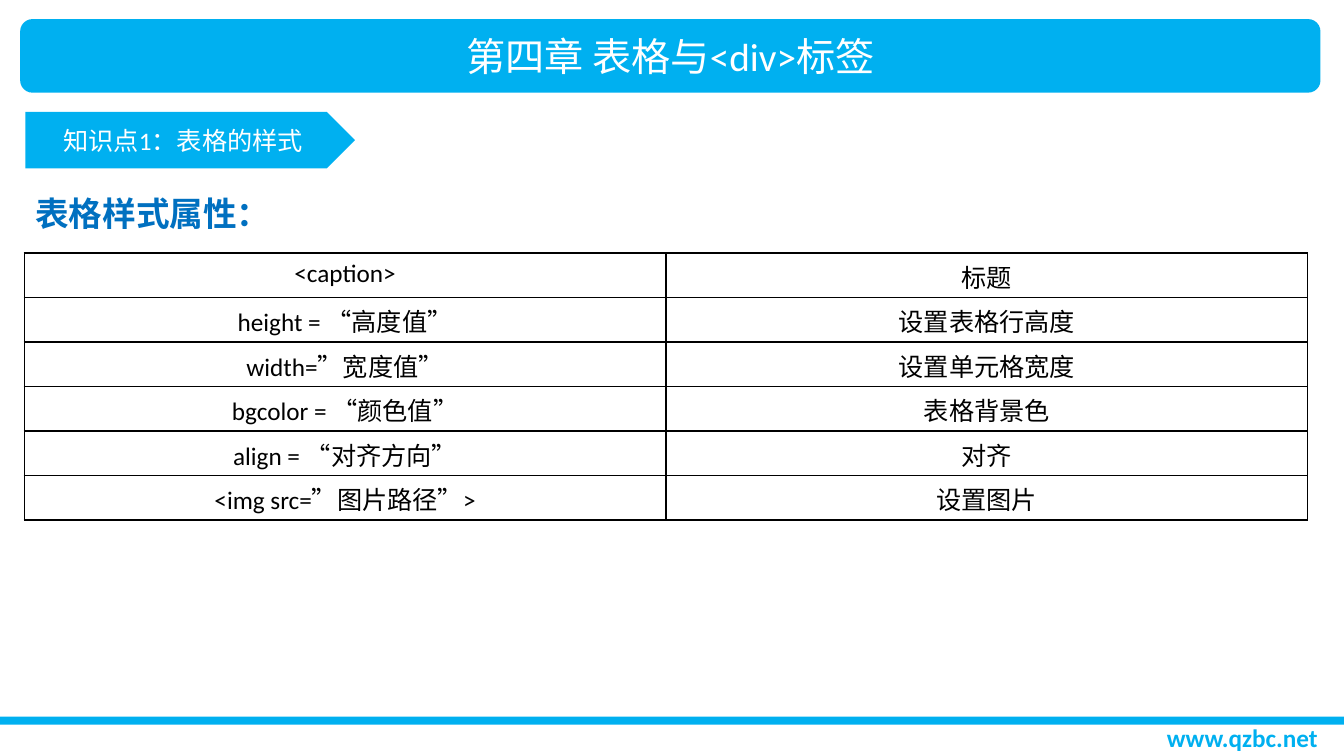
import dataclasses

import pptx
import pptx.dml.color
import pptx.enum.lang
import pptx.enum.shapes
import pptx.enum.text
import pptx.oxml
import pptx.oxml.ns
import pptx.util

SHAPE = pptx.enum.shapes.MSO_SHAPE
ALIGN = pptx.enum.text.PP_ALIGN
ANCHOR = pptx.enum.text.MSO_ANCHOR
SLIDE_WIDTH = pptx.util.Inches(13.333)
SLIDE_HEIGHT = pptx.util.Inches(7.5)
TITLE_ONLY_LAYOUT = 5


@dataclasses.dataclass(frozen=True)
class Theme:
    accent: str = "00B0F0"
    heading: str = "0070C0"
    light: str = "FFFFFF"
    dark: str = "000000"
    latin_font: str = "Calibri"
    chinese_font: str = "Noto Sans CJK SC"
    chapter_size: int = 28
    heading_size: int = 24
    body_size: int = 18
    border_width: int = 1


THEME = Theme()

ATTRIBUTES = [
    ("<caption>", "标题"),
    ("height = “高度值”", "设置表格行高度"),
    ("width=”宽度值”", "设置单元格宽度"),
    ("bgcolor = “颜色值”", "表格背景色"),
    ("align = “对齐方向”", "对齐"),
    ("<img src=”图片路径”>", "设置图片"),
]


def color(value):
    return pptx.dml.color.RGBColor.from_string(value)


def area(left, top, width, height):
    """Turn percentages of the slide's size into lengths."""
    return (
        round(SLIDE_WIDTH * left / 100),
        round(SLIDE_HEIGHT * top / 100),
        round(SLIDE_WIDTH * width / 100),
        round(SLIDE_HEIGHT * height / 100),
    )


def apply_format(target, values):
    for name, value in values.items():
        setattr(target, name, value)


def write(text_frame, text, text_color, size=THEME.body_size,
          alignment=ALIGN.CENTER, latin_font=THEME.latin_font, bold=False):
    paragraph = text_frame.paragraphs[0]
    paragraph.alignment = alignment
    run = paragraph.add_run()
    run.text = text
    run.font.color.rgb = color(text_color)
    apply_format(run.font, {
        "name": latin_font,
        "size": pptx.util.Pt(size),
        "bold": bold,
        "language_id": pptx.enum.lang.MSO_LANGUAGE_ID.SIMPLIFIED_CHINESE,
    })
    latin = run.font._element.find(pptx.oxml.ns.qn("a:latin"))
    latin.addnext(pptx.oxml.parse_xml(
        f'<a:ea {pptx.oxml.ns.nsdecls("a")} typeface="{THEME.chinese_font}"/>'))


def add_block(slide, preset, bounds):
    shape = slide.shapes.add_shape(preset, *bounds)
    shape.shadow.inherit = False
    shape.fill.solid()
    shape.fill.fore_color.rgb = color(THEME.accent)
    shape.line.fill.background()
    return shape


def add_label(slide, preset, bounds, text, size):
    shape = add_block(slide, preset, bounds)
    shape.text_frame.vertical_anchor = ANCHOR.MIDDLE
    write(shape.text_frame, text, THEME.light, size)


def place_heading(slide, bounds, text):
    title = slide.shapes.title
    apply_format(title, dict(zip(("left", "top", "width", "height"), bounds)))
    apply_format(title.text_frame, {
        "word_wrap": True,
        "auto_size": pptx.enum.text.MSO_AUTO_SIZE.NONE,
        "vertical_anchor": ANCHOR.TOP,
    })
    write(title.text_frame, text, THEME.heading, THEME.heading_size,
          ALIGN.LEFT, THEME.chinese_font, True)


def add_website(slide, bounds, address):
    text_box = slide.shapes.add_textbox(*bounds)
    apply_format(text_box.text_frame, {
        "word_wrap": False,
        "auto_size": pptx.enum.text.MSO_AUTO_SIZE.SHAPE_TO_FIT_TEXT,
    })
    write(text_box.text_frame, address, THEME.accent, bold=True)


def set_borders(cell):
    properties = cell._tc.get_or_add_tcPr()
    for position, side in enumerate(("lnL", "lnR", "lnT", "lnB")):
        properties.insert(position, pptx.oxml.parse_xml(
            f'<a:{side} {pptx.oxml.ns.nsdecls("a")} '
            f'w="{pptx.util.Pt(THEME.border_width)}"><a:solidFill>'
            f'<a:srgbClr val="{THEME.dark}"/></a:solidFill></a:{side}>'))


def add_attribute_table(slide, bounds, rows):
    table = slide.shapes.add_table(len(rows), len(rows[0]), *bounds).table
    apply_format(table, {"first_row": False, "horz_banding": False})
    for row_index, row in enumerate(rows):
        for column_index, text in enumerate(row):
            cell = table.cell(row_index, column_index)
            cell.fill.background()
            set_borders(cell)
            write(cell.text_frame, text, THEME.dark)


def main():
    presentation = pptx.Presentation()
    apply_format(presentation, {"slide_width": SLIDE_WIDTH, "slide_height": SLIDE_HEIGHT})
    slide = presentation.slides.add_slide(presentation.slide_layouts[TITLE_ONLY_LAYOUT])

    add_website(slide, area(86.02, 94.93, 12.83, 5.33), "www.qzbc.net")
    add_label(slide, SHAPE.ROUNDED_RECTANGLE, area(1.5, 2.53, 96.75, 9.73),
              "第四章 表格与<div>标签", THEME.chapter_size)
    add_block(slide, SHAPE.RECTANGLE, area(0, 94.8, 100, 1.07))
    add_label(slide, SHAPE.PENTAGON, area(1.88, 14.8, 24.53, 7.47),
              "知识点1：表格的样式", THEME.body_size)
    add_attribute_table(slide, area(1.8, 33.47, 95.5, 35.33), ATTRIBUTES)
    place_heading(slide, area(1.88, 24.8, 94.05, 10.53), "表格样式属性：")

    presentation.save("out.pptx")


if __name__ == "__main__":
    main()
